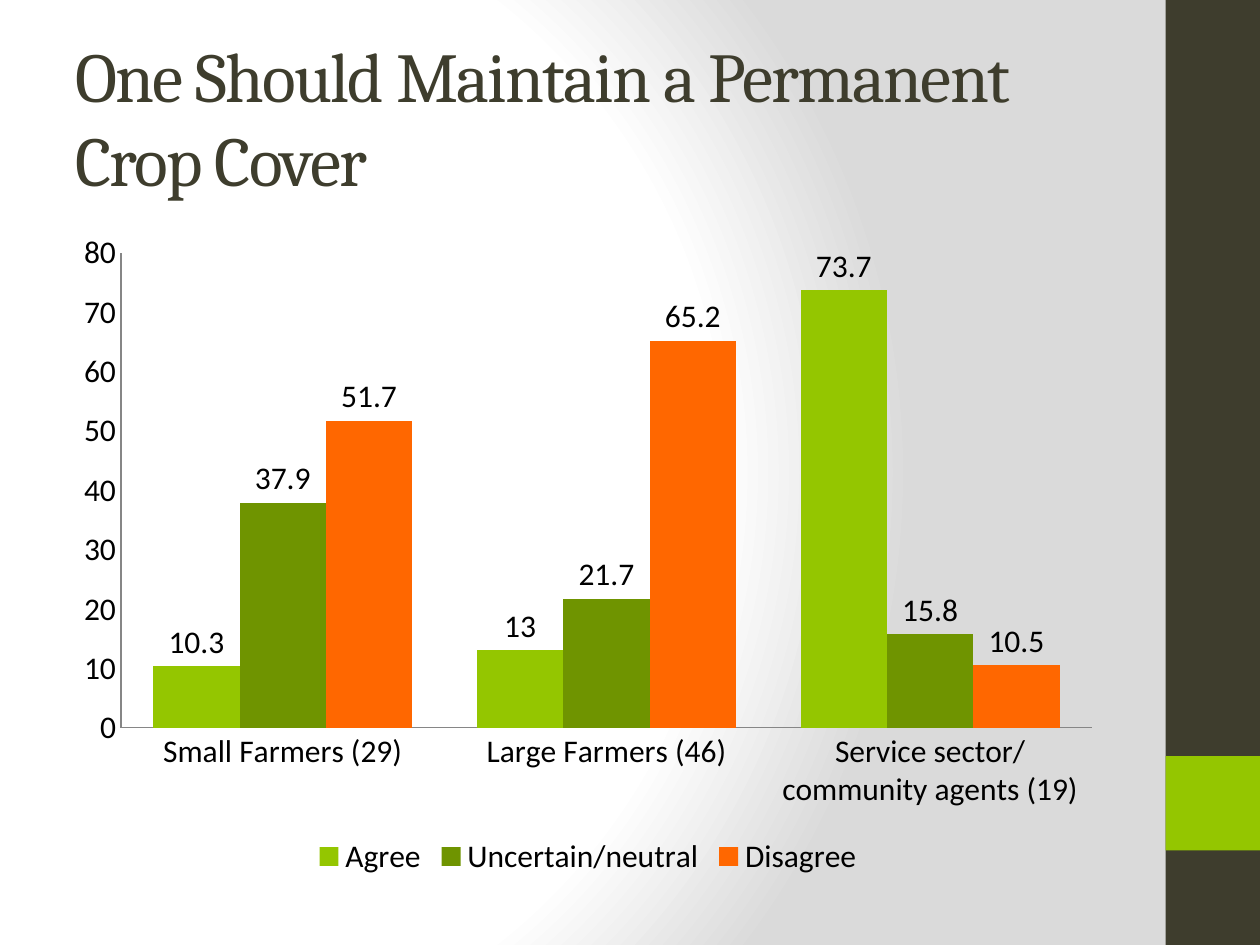
"""Build the slide on farmers' views of permanent crop cover."""
from lxml import etree
from pptx import Presentation, util as u
from pptx.chart.data import CategoryChartData
from pptx.dml.color import RGBColor
from pptx.enum import chart as ch, shapes, text
from pptx.oxml import parse_xml
from pptx.oxml.ns import nsdecls, qn

TITLE = "One Should Maintain a Permanent Crop Cover"
GROUPS = ["Small Farmers (29)", "Large Farmers (46)", "Service sector/ community agents (19)"]
ANSWERS = [
    ("Agree", (10.3, 13, 73.7), "lime"),
    ("Uncertain/neutral", (37.9, 21.7, 15.8), "green"),
    ("Disagree", (51.7, 65.2, 10.5), "orange"),
]
COLORS = {
    "lime": "94C600", "green": "6F9400", "orange": "FF6700", "dark": "3E3D2D",
    "black": "000000", "axis": "868686", "white": "FFFFFF", "grey": "DADADA",
}
BACKDROP = [(0, "white"), (75, "white"), (100, "grey")]
WIDTH, HEIGHT, BAND = 720, 540, 54
LEFT, CONTENT_WIDTH = 36, 600
BANDS = [(0, HEIGHT, "dark"), (432, BAND, "lime")]


def rgb(name):
    return RGBColor.from_string(COLORS[name])


def paint_backdrop(slide):
    slide.background.fill.gradient()
    stops = "".join(
        f'<a:gs pos="{pos * 1000}"><a:srgbClr val="{COLORS[name]}"/></a:gs>'
        for pos, name in BACKDROP
    )
    gradient = slide.element.find(".//" + qn("a:gradFill"))
    gradient.getparent().replace(gradient, parse_xml(
        f'<a:gradFill {nsdecls("a")} rotWithShape="1"><a:gsLst>{stops}</a:gsLst>'
        '<a:path path="circle"><a:fillToRect l="20000" t="50000" r="100000" b="50000"/>'
        "</a:path></a:gradFill>"
    ))


def add_bands(slide):
    for top, height, color in BANDS:
        band = slide.shapes.add_shape(
            shapes.MSO_SHAPE.RECTANGLE,
            u.Pt(WIDTH - BAND), u.Pt(top), u.Pt(BAND), u.Pt(height))
        band.shadow.inherit = False
        band.fill.solid()
        band.fill.fore_color.rgb = rgb(color)
        band.line.fill.background()


def add_title(slide):
    title = slide.shapes.add_textbox(
        u.Pt(LEFT), u.Pt(21.6), u.Pt(CONTENT_WIDTH), u.Pt(90)).text_frame
    title.word_wrap = True
    title.vertical_anchor = text.MSO_ANCHOR.MIDDLE
    heading = title.paragraphs[0].add_run()
    heading.text = TITLE
    heading.font.size = u.Pt(40)
    heading.font.name = "Cambria"
    heading.font.color.rgb = rgb("dark")
    heading.font._element.set("spc", "-100")


def add_opinions(slide):
    opinions = CategoryChartData()
    opinions.categories = GROUPS
    for answer, shares, _ in ANSWERS:
        opinions.add_series(answer, shares)
    chart = slide.shapes.add_chart(
        ch.XL_CHART_TYPE.COLUMN_CLUSTERED,
        u.Pt(LEFT), u.Pt(126), u.Pt(CONTENT_WIDTH), u.Pt(378), opinions).chart
    chart.has_title = False
    chart.font.size = u.Pt(18)
    chart.font.name = "Calibri"
    chart.font.color.rgb = rgb("black")
    chart.has_legend = True
    chart.legend.position = ch.XL_LEGEND_POSITION.BOTTOM
    chart.legend.include_in_layout = False

    for axis in (chart.category_axis, chart.value_axis):
        axis.has_major_gridlines = False
        axis.major_tick_mark = axis.minor_tick_mark = ch.XL_TICK_MARK.NONE
        axis.format.line.color.rgb = rgb("axis")
        axis.format.line.width = u.Pt(0.75)
    chart.value_axis.minimum_scale = 0
    chart.value_axis.maximum_scale = 80
    chart.value_axis.major_unit = 10

    plot = chart.plots[0]
    plot.gap_width = 75
    plot.overlap = 0
    plot.vary_by_categories = False
    for series, (_, _, color) in zip(plot.series, ANSWERS):
        series.format.fill.solid()
        series.format.fill.fore_color.rgb = rgb(color)
        series.invert_if_negative = False
        series.data_labels.show_value = True
        series.data_labels.position = ch.XL_LABEL_POSITION.OUTSIDE_END


def main():
    deck = Presentation()
    deck.slide_width, deck.slide_height = u.Pt(WIDTH), u.Pt(HEIGHT)
    slide = deck.slides.add_slide(deck.slide_layouts[6])
    paint_backdrop(slide)
    add_bands(slide)
    add_title(slide)
    add_opinions(slide)
    deck.save("out.pptx")


if __name__ == "__main__":
    main()
